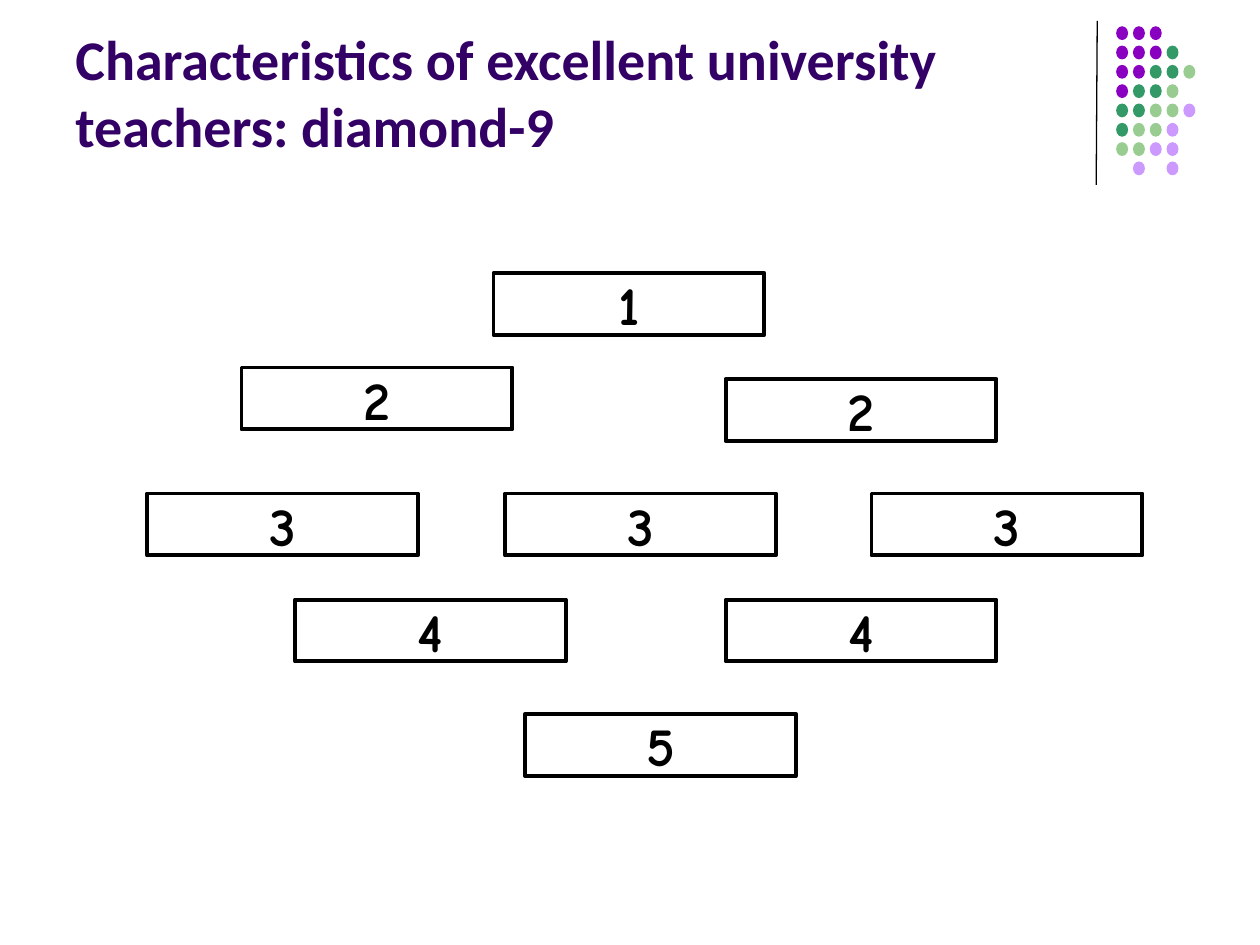
from dataclasses import dataclass

from lxml import etree
from pptx import Presentation
from pptx.dml.color import RGBColor
from pptx.enum.shapes import MSO_CONNECTOR, MSO_SHAPE
from pptx.enum.text import MSO_ANCHOR, PP_ALIGN
from pptx.oxml.ns import qn
from pptx.util import Inches, Pt

RECTANGLE, OVAL = MSO_SHAPE.RECTANGLE, MSO_SHAPE.OVAL
STRAIGHT = MSO_CONNECTOR.STRAIGHT
MIDDLE, BOTTOM = MSO_ANCHOR.MIDDLE, MSO_ANCHOR.BOTTOM
LEFT, CENTER = PP_ALIGN.LEFT, PP_ALIGN.CENTER

CELLS_PER_INCH = 12
BLACK = "000000"
DOT_COLORS = {"P": "8A00C0", "G": "339966", "L": "99CC91", "V": "CC99FF"}
DOT_ROWS = ["PPP", "PPPG", "PPGGL", "PGGL", "GGLLV", "GLLV", "LLVV", " V V"]
RANKS = [
    ("1", 47, 26),
    ("2", 23, 35), ("2", 69.1, 36.1),
    ("3", 14, 47), ("3", 48.1, 47), ("3", 83, 47),
    ("4", 28.1, 57.1), ("4", 69.1, 57.1),
    ("5", 50, 68),
]


def color(value):
    return RGBColor.from_string(value)


def cells(*counts):
    return [Inches(count / CELLS_PER_INCH) for count in counts]


@dataclass
class DiamondSlide:
    """Draws slide elements on a grid of twelve cells to the inch."""

    page: object
    title_format: dict
    rank_format: dict

    def set_text(self, box, text, anchor, align, wrap, font_format):
        frame = box.text_frame
        frame.word_wrap = wrap
        frame.vertical_anchor = anchor
        para = frame.paragraphs[0]
        para.alignment = align
        span = para.add_run()
        span.text = text
        span.font.color.rgb = color(font_format["color"])
        for name, value in font_format.items():
            if name != "color":
                setattr(span.font, name, value)

    def title(self, text, left, top, width, height):
        box = self.page.shapes.add_textbox(*cells(left, top, width, height))
        self.set_text(box, text, BOTTOM, LEFT, True, self.title_format)

    def rank(self, text, left, top, width=25.8, height=5.9):
        box = self.page.shapes.add_shape(RECTANGLE, *cells(left, top, width, height))
        box.shadow.inherit = False
        box.fill.background()
        box.line.color.rgb = color(BLACK)
        box.line.width = Pt(2.25)
        self.set_text(box, text, MIDDLE, CENTER, False, self.rank_format)

    def rule(self, start, end):
        line = self.page.shapes.add_connector(STRAIGHT, *cells(*start, *end))
        line.line.color.rgb = color(BLACK)
        line.line.width = Pt(0.75)
        etree.SubElement(line._element.spPr, qn("a:effectLst"))

    def dots(self, rows, left, top, column_step, row_step, width, height):
        group = self.page.shapes.add_group_shape()
        for row, keys in enumerate(rows):
            for column, key in enumerate(keys):
                if key not in DOT_COLORS:
                    continue
                place = cells(left + column * column_step, top + row * row_step, width, height)
                dot = group.shapes.add_shape(OVAL, *place)
                dot.shadow.inherit = False
                dot.fill.solid()
                dot.fill.fore_color.rgb = color(DOT_COLORS[key])
                dot.line.fill.background()


def main():
    deck = Presentation()
    deck.slide_width, deck.slide_height = cells(120, 90)
    diamond = DiamondSlide(
        page=deck.slides.add_slide(deck.slide_layouts[6]),
        title_format={"name": "Calibri", "size": Pt(32), "bold": True, "color": "330066"},
        rank_format={"name": "Comic Neue", "size": Pt(31), "bold": True, "color": BLACK},
    )
    diamond.rule((104.5, 2), (104.4, 17.6))
    diamond.dots(DOT_ROWS, 106.3, 2.5, 1.6, 1.84, 1.14, 1.32)
    for text, left, top in RANKS:
        diamond.rank(text, left, top)
    diamond.title("Characteristics of excellent university teachers: diamond-9", 6, 1.6, 99, 14.1)
    deck.save("out.pptx")


if __name__ == "__main__":
    main()
